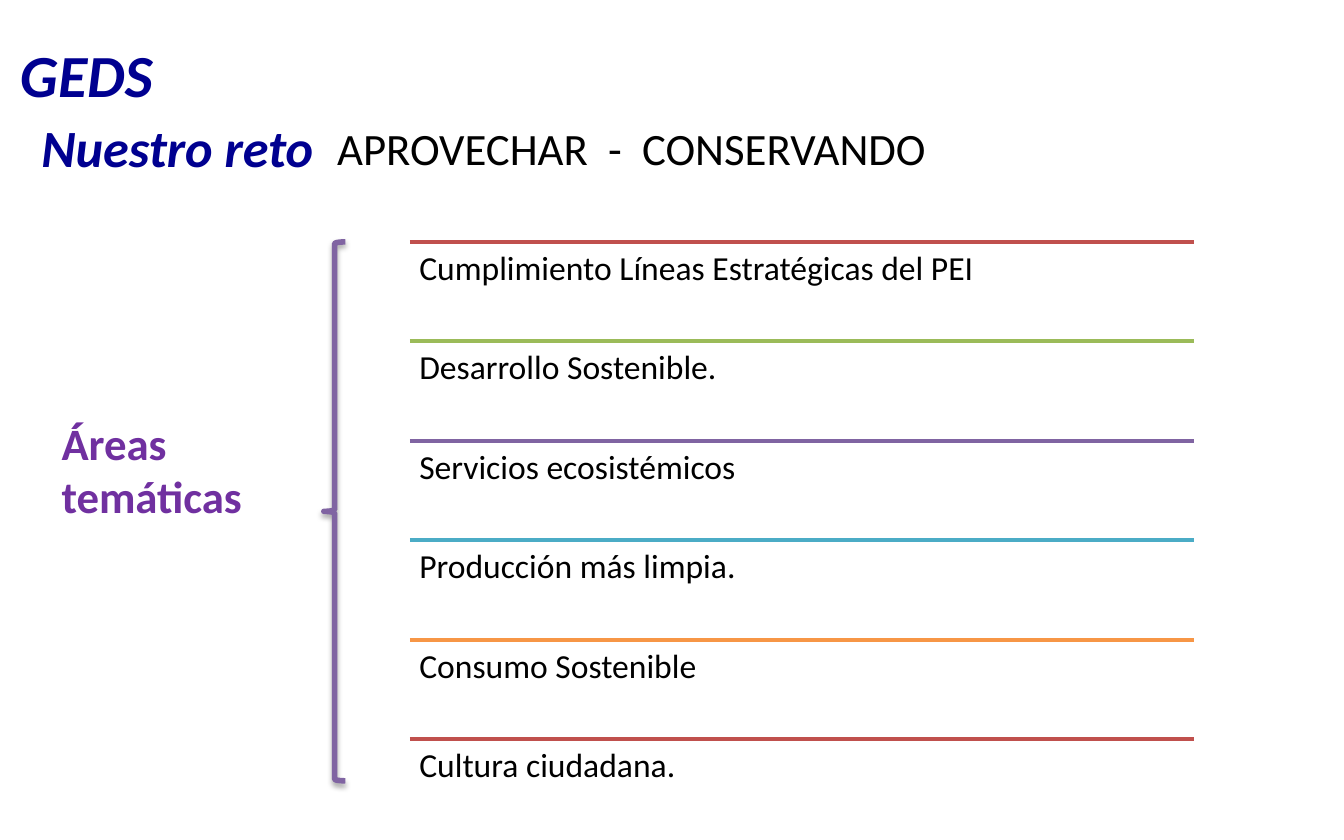
from lxml import etree
from pptx import Presentation
from pptx import util as u
from pptx.dml.color import RGBColor
from pptx.enum import shapes, text
from pptx.oxml import ns

COLORS = {
    "navy": "000090", "black": "000000", "violet": "7030A0",
    "red": "C0504D", "green": "9BBB59", "purple": "8064A2",
    "aqua": "4BACC6", "orange": "F79646",
}
AREAS = [
    ("Cumplimiento Líneas Estratégicas del PEI", "red"),
    ("Desarrollo Sostenible.", "green"),
    ("Servicios ecosistémicos", "purple"),
    ("Producción más limpia.", "aqua"),
    ("Consumo Sostenible", "orange"),
    ("Cultura ciudadana.", "red"),
]
COLUMNS, ROWS = 100, 62.5
AREA_LEFT, AREA_WIDTH = 30.5, 58.35
AREA_TOP, AREA_PITCH = 18, 7.4


def rgb(color):
    return RGBColor.from_string(COLORS[color])


def write(frame, words, size=18, color="black", bold=False, italic=False,
          align=text.PP_ALIGN.LEFT, spacing=1.0):
    paragraph = frame.paragraphs[0]
    paragraph.alignment = align
    paragraph.line_spacing = spacing
    run = paragraph.add_run()
    run.text = words
    font = run.font
    font.name, font.size = "Calibri", u.Pt(size)
    font.bold, font.italic = bold, italic
    font.color.rgb = rgb(color)


class Page:
    def __init__(self, deck):
        self.width, self.height = deck.slide_width, deck.slide_height
        self.slide = deck.slides.add_slide(deck.slide_layouts[6])

    def x(self, columns):
        return round(self.width * columns / COLUMNS)

    def y(self, rows):
        return round(self.height * rows / ROWS)

    def box(self, left, top, width, height):
        return self.x(left), self.y(top), self.x(width), self.y(height)

    def label(self, words, left, top, width, height, inset=None, **style):
        frame = self.slide.shapes.add_textbox(
            *self.box(left, top, width, height)).text_frame
        frame.word_wrap = True
        if inset is not None:
            frame.margin_left = frame.margin_right = u.Inches(inset)
            frame.margin_top = frame.margin_bottom = u.Inches(inset)
        write(frame, words, **style)

    def rule(self, left, top, width, color, weight=2):
        line = self.slide.shapes.add_connector(
            shapes.MSO_CONNECTOR.STRAIGHT, self.x(left), self.y(top),
            self.x(left + width), self.y(top))
        line.line.color.rgb = rgb(color)
        line.line.width = u.Pt(weight)
        etree.SubElement(line._element.spPr, ns.qn("a:effectLst"))

    def brace(self, left, top, width, height, color, weight=3):
        brace = self.slide.shapes.add_shape(
            shapes.MSO_SHAPE.LEFT_BRACE, *self.box(left, top, width, height))
        brace.fill.background()
        brace.line.color.rgb = rgb(color)
        brace.line.width = u.Pt(weight)
        brace.shadow.inherit = False
        effects = brace._element.spPr.find(ns.qn("a:effectLst"))
        shadow = etree.SubElement(
            effects, ns.qn("a:outerShdw"), blurRad=str(u.Pt(3.1)),
            dist=str(u.Pt(1.8)), dir="5400000", rotWithShape="0")
        tint = etree.SubElement(shadow, ns.qn("a:srgbClr"), val=COLORS["black"])
        etree.SubElement(tint, ns.qn("a:alpha"), val="35000")


def main():
    deck = Presentation()
    deck.slide_width, deck.slide_height = u.Inches(10), u.Inches(6.25)
    page = Page(deck)
    justify = text.PP_ALIGN.JUSTIFY
    heading = {"color": "navy", "bold": True, "italic": True}

    page.label("GEDS", 0.5, 2.3, 64.2, 5.8, size=32, **heading)
    page.label("APROVECHAR  -  CONSERVANDO", 24.1, 8.5, 75.9, 5,
               size=24, align=justify)
    page.label("Nuestro reto", 2.1, 8.1, 64.2, 5.8, size=28, **heading)

    for row, (area, color) in enumerate(AREAS):
        top = AREA_TOP + row * AREA_PITCH
        page.rule(AREA_LEFT, top, AREA_WIDTH, color)
        page.label(area, AREA_LEFT, top, AREA_WIDTH, AREA_PITCH,
                   inset=0.07, spacing=0.9)

    page.label("Áreas temáticas", 3.6, 30.4, 23.7, 9.1, size=24,
               color="violet", bold=True, align=justify)
    page.brace(24.1, AREA_TOP, 1.6, 40.1, "purple")
    deck.save("out.pptx")


if __name__ == "__main__":
    main()
